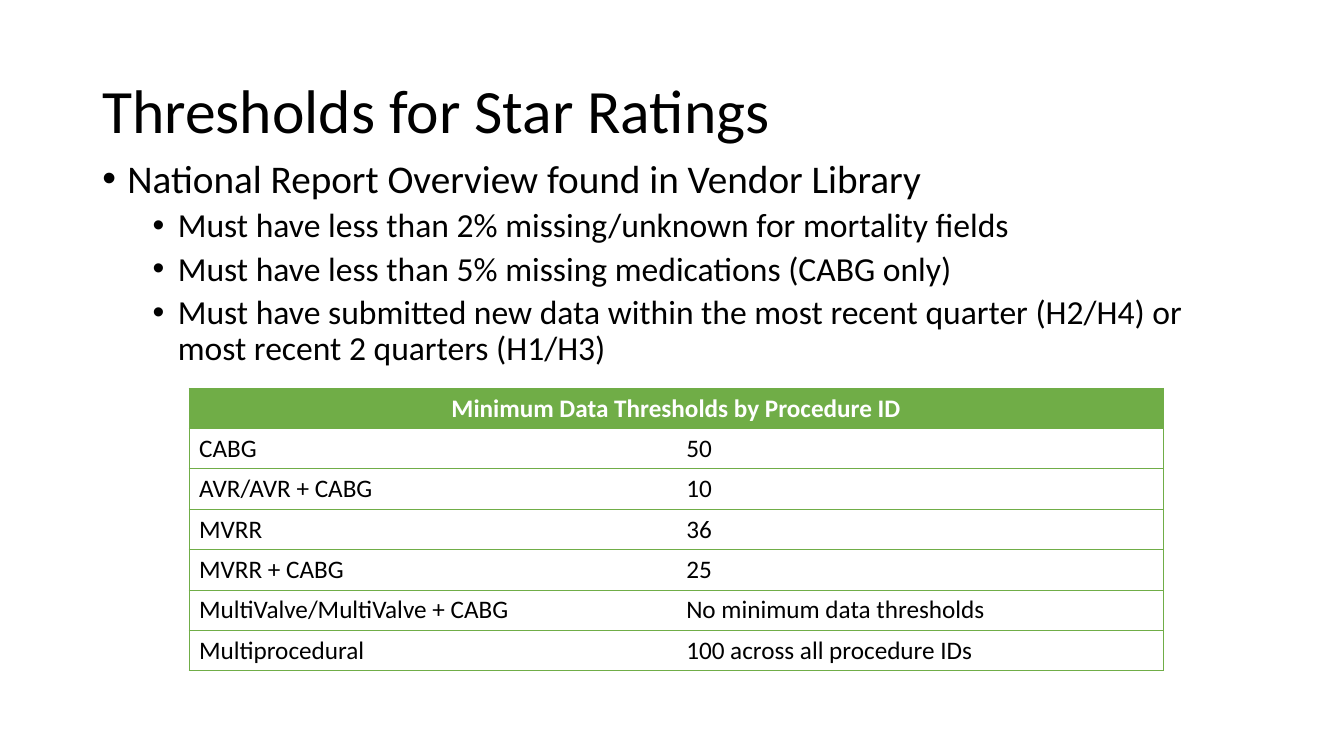
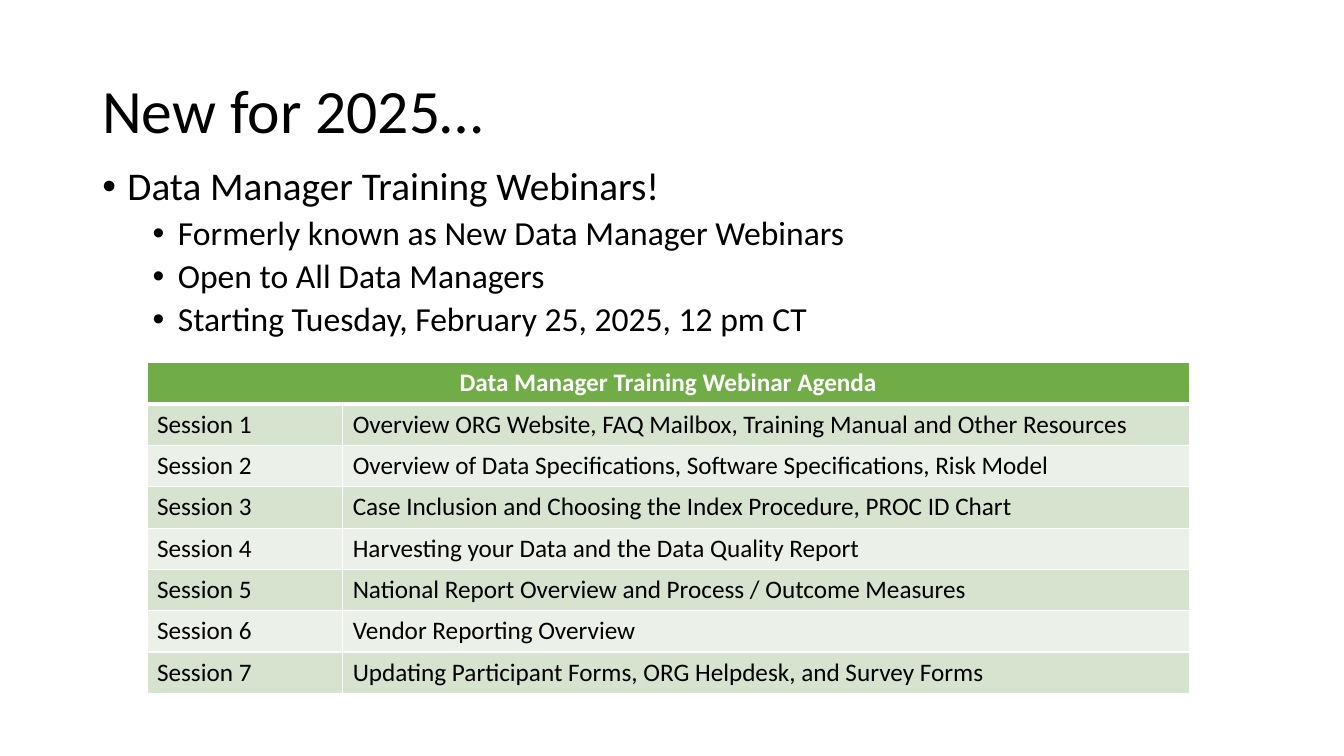
"""Build two slides on star rating thresholds and training webinars."""
from lxml.etree import SubElement
from pptx import Presentation
from pptx.dml.color import RGBColor
from pptx.enum.text import MSO_ANCHOR, PP_ALIGN
from pptx.oxml.ns import qn
from pptx.util import Emu, Inches, Pt

BLACK = RGBColor(0x00, 0x00, 0x00)
WHITE = RGBColor(0xFF, 0xFF, 0xFF)
GREEN = RGBColor(0x70, 0xAD, 0x47)
BAND_DARK = RGBColor(0xD5, 0xE3, 0xCF)
BAND_LIGHT = RGBColor(0xEB, 0xF1, 0xE9)
FONT = "Calibri"
COLS = 160

SLIDES = [
    {
        "title": "Thresholds for Star Ratings",
        "body_top": 18.4,
        "bullets": [
            "National Report Overview found in Vendor Library",
            "Must have less than 2% missing/unknown for mortality fields",
            "Must have less than 5% missing medications (CABG only)",
            "Must have submitted new data within the most recent quarter (H2/H4) "
            "or most recent 2 quarters (H1/H3)",
        ],
        "header": "Minimum Data Thresholds by Procedure ID",
        "rows": [
            ("CABG", "50"),
            ("AVR/AVR + CABG", "10"),
            ("MVRR", "36"),
            ("MVRR + CABG", "25"),
            ("MultiValve/MultiValve + CABG", "No minimum data thresholds"),
            ("Multiprocedural", "100 across all procedure IDs"),
        ],
        "left": 22.5, "top": 46.2, "widths": (58, 58), "row_height": 4.8,
        "bands": None, "line": GREEN, "line_width": 0.5,
        "header_line": 0.5, "inner_line": 0,
    },
    {
        "title": "New for 2025…",
        "body_top": 19.3,
        "bullets": [
            "Data Manager Training Webinars!",
            "Formerly known as New Data Manager Webinars",
            "Open to All Data Managers",
            "Starting Tuesday, February 25, 2025, 12 pm CT",
        ],
        "header": "Data Manager Training Webinar Agenda",
        "rows": [(f"Session {i}", topic) for i, topic in enumerate([
            "Overview ORG Website, FAQ Mailbox, Training Manual and Other Resources",
            "Overview of Data Specifications, Software Specifications, Risk Model",
            "Case Inclusion and Choosing the Index Procedure, PROC ID Chart",
            "Harvesting your Data and the Data Quality Report",
            "National Report Overview and Process / Outcome Measures",
            "Vendor Reporting Overview",
            "Updating Participant Forms, ORG Helpdesk, and Survey Forms",
        ], 1)],
        "left": 17.5, "top": 43.2, "widths": (23.3, 100.8), "row_height": 4.92,
        "bands": (BAND_DARK, BAND_LIGHT), "line": WHITE, "line_width": 1,
        "header_line": 3, "inner_line": 1,
    },
]


def add_text(tf, text, size=18, color=BLACK, bold=False, align=PP_ALIGN.LEFT,
             indent=None, before=0, spacing=None):
    """Write one paragraph, with a bullet when an indent is given."""
    p = tf.paragraphs[0]
    if p.runs:
        p = tf.add_paragraph()
    if indent is not None:
        pPr = p._p.get_or_add_pPr()
        pPr.set("marL", str(Inches(indent)))
        pPr.set("indent", str(Inches(-0.25)))
        SubElement(pPr, qn("a:buFont"), typeface="Arial")
        SubElement(pPr, qn("a:buChar"), char="•")
    p.alignment = align
    p.space_before = Pt(before)
    if spacing:
        p.line_spacing = spacing
    r = p.add_run()
    r.text = text
    r.font.name, r.font.size, r.font.bold = FONT, Pt(size), bold
    r.font.color.rgb = color


def add_borders(cell, color, widths):
    """Draw the left, right, top and bottom borders of a cell."""
    tcPr = cell._tc.get_or_add_tcPr()
    for side, width in zip("LRTB", widths):
        ln = SubElement(tcPr, qn(f"a:ln{side}"), w=str(Pt(width)))
        if width:
            fill = SubElement(ln, qn("a:solidFill"))
            SubElement(fill, qn("a:srgbClr"), val=str(color))
        else:
            SubElement(ln, qn("a:noFill"))


prs = Presentation()
prs.slide_width, prs.slide_height = Emu(12192000), Inches(7.5)
unit = prs.slide_width / COLS

for d in SLIDES:
    s = prs.slides.add_slide(prs.slide_layouts[6])
    frames = []
    for top, height in ((4.8, 17.4), (d["body_top"], 26)):
        sp = s.shapes.add_textbox(*(Emu(round(n * unit)) for n in (11, top, 138, height)))
        sp.text_frame.word_wrap = True
        frames.append(sp.text_frame)
    title, body = frames
    title.vertical_anchor = MSO_ANCHOR.MIDDLE
    add_text(title, d["title"], size=44, spacing=0.9)
    for i, text in enumerate(d["bullets"]):
        add_text(body, text, size=24 if i else 28, indent=0.75 if i else 0.25,
                 before=5 if i else 0, spacing=0.9)

    rows = [(d["header"], "")] + d["rows"]
    box = (d["left"], d["top"], sum(d["widths"]), d["row_height"] * len(rows))
    table = s.shapes.add_table(len(rows), 2, *(Emu(round(n * unit)) for n in box)).table
    table.horz_banding = False
    for column, width in zip(table.columns, d["widths"]):
        column.width = Emu(round(width * unit))
    table.cell(0, 0).merge(table.cell(0, 1))
    for i, row in enumerate(rows):
        table.rows[i].height = Emu(round(d["row_height"] * unit))
        for j, text in enumerate(row):
            cell = table.cell(i, j)
            outer, inner = d["line_width"], d["inner_line"]
            add_borders(cell, d["line"], (
                inner if j else outer,
                outer if j or not i else inner,
                d["header_line"] if i == 1 else outer,
                outer if i else d["header_line"],
            ))
            if i and not d["bands"]:
                cell.fill.background()
            else:
                cell.fill.solid()
                cell.fill.fore_color.rgb = d["bands"][(i - 1) % 2] if i else GREEN
            if text:
                add_text(cell.text_frame, text, color=BLACK if i else WHITE, bold=not i,
                         align=PP_ALIGN.LEFT if i else PP_ALIGN.CENTER)

prs.save("out.pptx")
